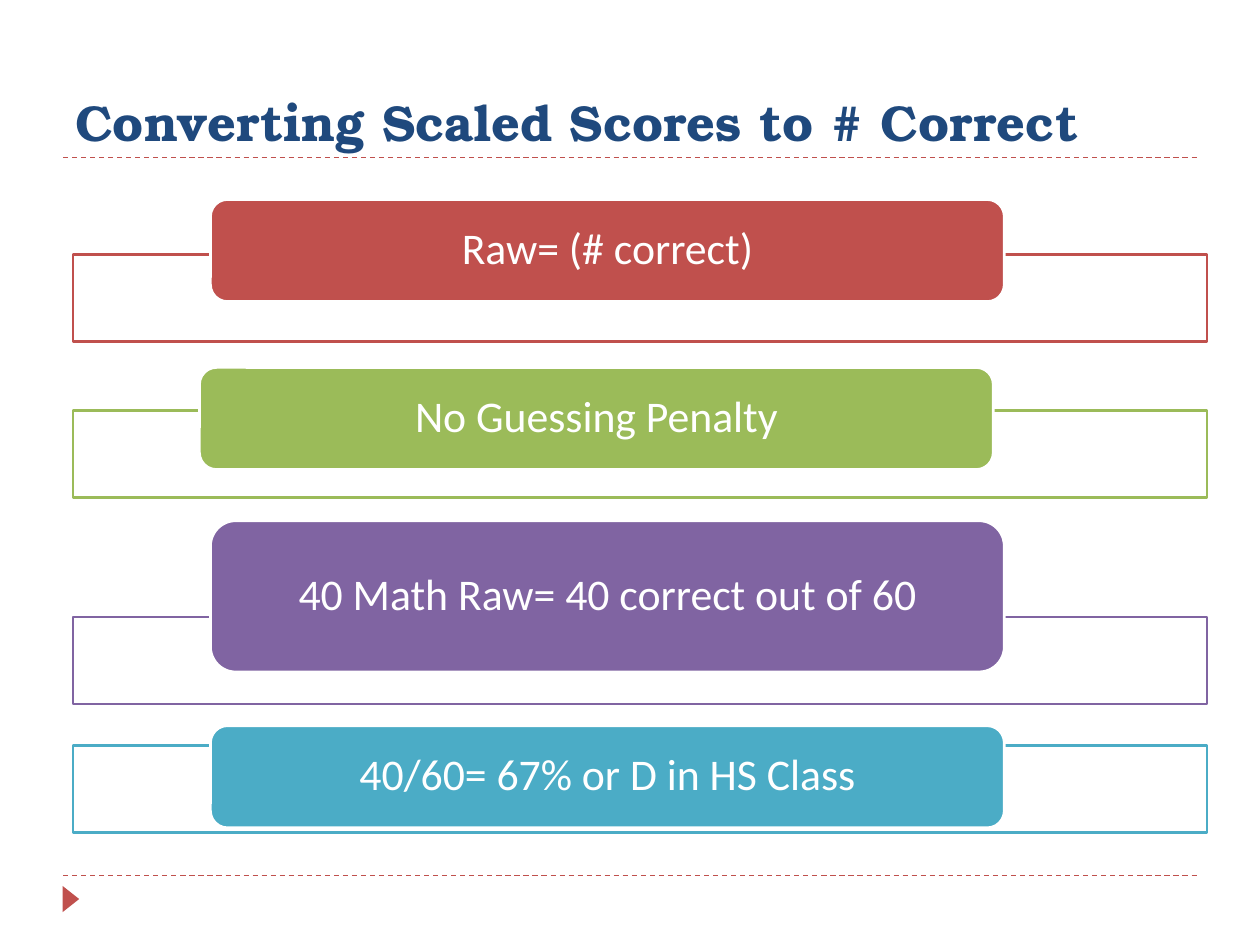
"""Build the slide on converting scaled scores to the number correct."""
from dataclasses import dataclass

from lxml import etree
from pptx import Presentation
from pptx.dml.color import RGBColor
from pptx.enum import dml, shapes, text
from pptx.oxml import ns
from pptx.util import Pt

RED = RGBColor(0xC0, 0x50, 0x4D)
GREEN = RGBColor(0x9B, 0xBB, 0x59)
PURPLE = RGBColor(0x80, 0x64, 0xA2)
TEAL = RGBColor(0x4B, 0xAC, 0xC6)
NAVY = RGBColor(0x1F, 0x49, 0x7D)
WHITE = RGBColor(0xFF, 0xFF, 0xFF)

MARGIN, WIDTH = 36, 648
FRAME_LEFT, FRAME_HEIGHT = 41.8, 49.7
LABEL_WIDTH = 453.6


@dataclass
class Step:
    wording: str
    color: RGBColor
    frame_top: float
    label_top: float
    label_left: float = 120.3
    label_height: float = 58.3


STEPS = [
    Step("Raw= (# correct)", RED, 145.4, 114),
    Step("No Guessing Penalty", GREEN, 234.7, 210, label_left=114),
    Step("40 Math Raw= 40 correct out of 60", PURPLE, 352.6, 297.6, label_height=86.4),
    Step("40/60= 67% or D in HS Class", TEAL, 426, 414.7),
]


def add_run(p, wording: str, font: str, size: float, color: RGBColor, bold: bool = False) -> None:
    r = p.add_run()
    r.text = wording
    r.font.name, r.font.size, r.font.bold = font, Pt(size), bold
    r.font.color.rgb = color


def add_box(s, kind, left: float, top: float, width: float, height: float, fill: RGBColor):
    sp = s.shapes.add_shape(kind, Pt(left), Pt(top), Pt(width), Pt(height))
    sp.shadow.inherit = False
    sp.fill.solid()
    sp.fill.fore_color.rgb = fill
    sp.line.fill.background()
    return sp


def outline(sp, color: RGBColor) -> None:
    sp.line.color.rgb = color
    sp.line.width = Pt(1.5)


def add_rule(s, y: float) -> None:
    line = s.shapes.add_connector(
        shapes.MSO_CONNECTOR.STRAIGHT, Pt(MARGIN), Pt(y), Pt(MARGIN + WIDTH), Pt(y))
    line.line.color.rgb = RED
    line.line.width = Pt(0.75)
    line.line.dash_style = dml.MSO_LINE.DASH
    etree.SubElement(line._element.spPr, ns.qn("a:effectLst"))


def add_title(s, wording: str) -> None:
    sp = s.shapes.title
    sp.left, sp.top, sp.width, sp.height = Pt(MARGIN), Pt(12), Pt(WIDTH), Pt(78)
    tf = sp.text_frame
    tf.auto_size = text.MSO_AUTO_SIZE.NONE
    tf.vertical_anchor = text.MSO_ANCHOR.BOTTOM
    p = tf.paragraphs[0]
    p.alignment = text.PP_ALIGN.LEFT
    add_run(p, wording, "TeX Gyre Bonum", 28.8, NAVY, bold=True)


def add_step(s, step: Step) -> None:
    frame = add_box(s, shapes.MSO_SHAPE.RECTANGLE, FRAME_LEFT, step.frame_top,
                    WIDTH, FRAME_HEIGHT, WHITE)
    outline(frame, step.color)
    label = add_box(s, shapes.MSO_SHAPE.ROUNDED_RECTANGLE, step.label_left, step.label_top,
                    LABEL_WIDTH, step.label_height, step.color)
    outline(label, WHITE)
    tf = label.text_frame
    tf.word_wrap = True
    tf.vertical_anchor = text.MSO_ANCHOR.MIDDLE
    tf.margin_left = tf.margin_right = Pt(17)
    tf.margin_top = tf.margin_bottom = Pt(0)
    p = tf.paragraphs[0]
    p.alignment = text.PP_ALIGN.CENTER
    p.line_spacing = 0.9
    add_run(p, step.wording, "Calibri", 25, WHITE)


def main() -> None:
    prs = Presentation()
    prs.slide_width, prs.slide_height = Pt(720), Pt(540)
    s = prs.slides.add_slide(prs.slide_layouts[5])
    for y in (500.4, 90):
        add_rule(s, y)
    marker = add_box(s, shapes.MSO_SHAPE.ISOSCELES_TRIANGLE, 33, 509, 15, 9.5, RED)
    marker.rotation = 90
    add_title(s, "Converting Scaled Scores to # Correct")
    for step in STEPS:
        add_step(s, step)
    prs.save("out.pptx")


if __name__ == "__main__":
    main()
